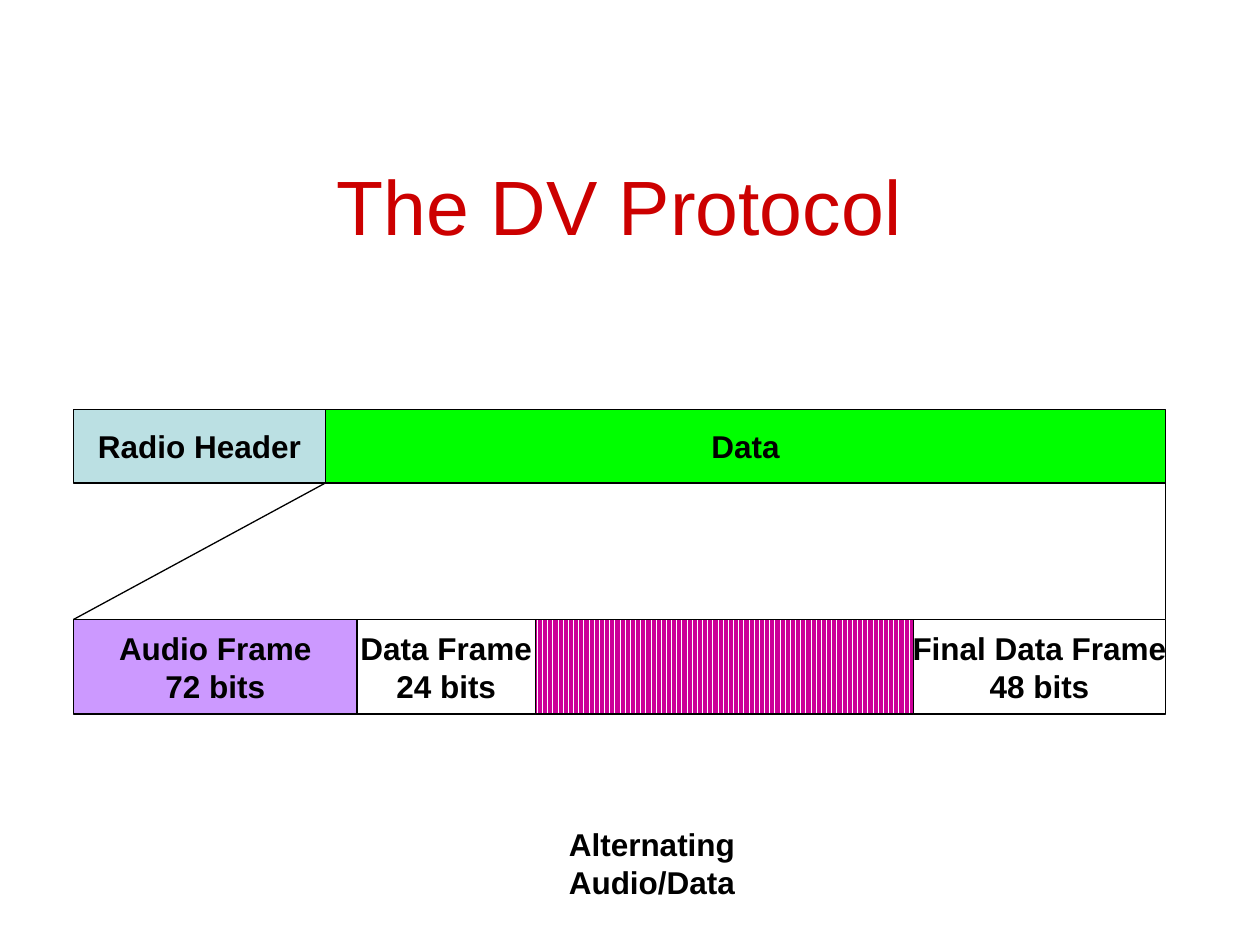
from pptx import Presentation
from pptx.dml.color import RGBColor
from pptx.enum.dml import MSO_PATTERN
from pptx.enum.shapes import MSO_CONNECTOR, MSO_SHAPE
from pptx.enum.text import MSO_ANCHOR, PP_ALIGN
from pptx.oxml.ns import qn
from pptx.util import Pt
from lxml.etree import SubElement

BLACK = RGBColor(0x00, 0x00, 0x00)
WHITE = RGBColor(0xFF, 0xFF, 0xFF)
RED = RGBColor(0xCC, 0x00, 0x00)
GREEN = RGBColor(0x00, 0xFF, 0x00)
PALE_TEAL = RGBColor(0xBB, 0xE0, 0xE3)
LILAC = RGBColor(0xCC, 0x99, 0xFF)
MAGENTA = RGBColor(0xCC, 0x00, 0x99)

BAR_LEFT = 42
PACKET_TOP, PACKET_HEIGHT = 234, 42
FRAMES_TOP, FRAMES_HEIGHT = 354, 54
STRIPES = None

# Each field: width, fill, lines of text
PACKET = [
    (144, PALE_TEAL, ["Radio Header"]),
    (480, GREEN, ["Data"]),
]
FRAMES = [
    (162, LILAC, ["Audio Frame", "72 bits"]),
    (102, WHITE, ["Data Frame", "24 bits"]),
    (216, STRIPES, []),
    (144, WHITE, ["Final Data Frame", "48 bits"]),
]


class SlideBuilder:
    font_name = "Arial"
    line_width = Pt(0.75)

    def __init__(self, slide):
        self.slide = slide

    def fill_text(self, frame, lines, size=18, color=BLACK, bold=True, align=PP_ALIGN.CENTER):
        for index, line in enumerate(lines):
            paragraph = frame.add_paragraph() if index else frame.paragraphs[0]
            paragraph.text = line
            paragraph.alignment = align
            font = paragraph.font
            font.name, font.size, font.bold = self.font_name, Pt(size), bold
            font.color.rgb = color

    def text(self, left, top, width, height, line, anchor=MSO_ANCHOR.TOP, **style):
        box = self.slide.shapes.add_textbox(Pt(left), Pt(top), Pt(width), Pt(height))
        box.text_frame.word_wrap = True
        box.text_frame.vertical_anchor = anchor
        self.fill_text(box.text_frame, [line], **style)

    def field(self, group, left, top, width, height, fill, lines):
        shape = group.shapes.add_shape(
            MSO_SHAPE.RECTANGLE, Pt(left), Pt(top), Pt(width), Pt(height))
        shape.shadow.inherit = False
        if fill is STRIPES:
            shape.fill.patterned()
            shape.fill.pattern = MSO_PATTERN.DARK_VERTICAL
            shape.fill.fore_color.rgb = MAGENTA
            shape.fill.back_color.rgb = WHITE
        else:
            shape.fill.solid()
            shape.fill.fore_color.rgb = fill
        shape.line.color.rgb = BLACK
        shape.line.width = self.line_width
        shape.text_frame.word_wrap = False
        shape.text_frame.vertical_anchor = MSO_ANCHOR.MIDDLE
        self.fill_text(shape.text_frame, lines)

    def bar(self, left, top, height, fields):
        """Draw the fields side by side as one group."""
        group = self.slide.shapes.add_group_shape()
        for width, fill, lines in fields:
            self.field(group, left, top, width, height, fill, lines)
            left += width

    def line(self, x1, y1, x2, y2):
        connector = self.slide.shapes.add_connector(
            MSO_CONNECTOR.STRAIGHT, Pt(x1), Pt(y1), Pt(x2), Pt(y2))
        connector.line.color.rgb = BLACK
        connector.line.width = self.line_width
        SubElement(connector._element.spPr, qn("a:effectLst"))


def main():
    presentation = Presentation()
    presentation.slide_width, presentation.slide_height = Pt(720), Pt(540)
    builder = SlideBuilder(presentation.slides.add_slide(presentation.slide_layouts[6]))

    builder.text(30, 72, 648, 90, "The DV Protocol", anchor=MSO_ANCHOR.MIDDLE,
                 size=44, color=RED, bold=False)

    builder.bar(BAR_LEFT, PACKET_TOP, PACKET_HEIGHT, PACKET)
    data_left = BAR_LEFT + PACKET[0][0]
    bar_right = data_left + PACKET[1][0]
    packet_bottom = PACKET_TOP + PACKET_HEIGHT
    builder.line(bar_right, packet_bottom, bar_right, FRAMES_TOP)
    builder.line(data_left, packet_bottom, BAR_LEFT, FRAMES_TOP)
    builder.bar(BAR_LEFT, FRAMES_TOP, FRAMES_HEIGHT, FRAMES)

    builder.text(318, 468, 194, 29, "Alternating Audio/Data", align=PP_ALIGN.LEFT)

    presentation.save("out.pptx")


if __name__ == "__main__":
    main()
